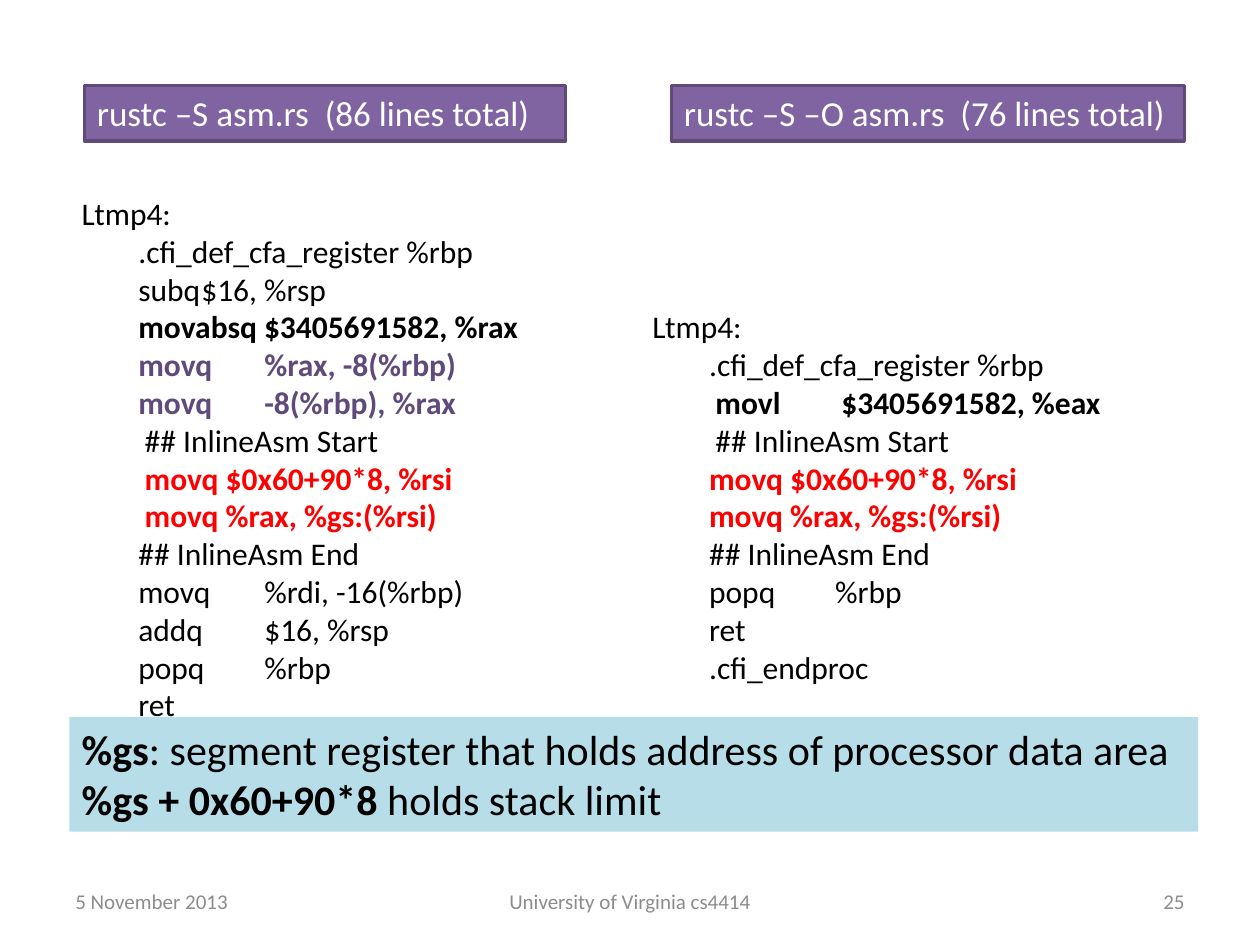
from pptx import Presentation
from pptx.dml.color import RGBColor
from pptx.enum.shapes import MSO_SHAPE
from pptx.enum.text import MSO_ANCHOR, MSO_AUTO_SIZE, PP_ALIGN
from pptx.oxml.ns import qn
from pptx.util import Inches, Pt
from lxml import etree

RECTANGLE = MSO_SHAPE.RECTANGLE
TOP, MIDDLE = MSO_ANCHOR.TOP, MSO_ANCHOR.MIDDLE
LEFT, CENTER, RIGHT = PP_ALIGN.LEFT, PP_ALIGN.CENTER, PP_ALIGN.RIGHT
GROW, FIXED = MSO_AUTO_SIZE.SHAPE_TO_FIT_TEXT, MSO_AUTO_SIZE.NONE

FONT = "Calibri"
COLORS = {
    "text": "000000",
    "white": "FFFFFF",
    "footer": "8C8C8C",
    "header": "8064A2",
    "header_line": "5F4A78",
    "memory": "604A7B",
    "inline": "FF0000",
    "note": "B7DEE8",
}
CODE_INDENT, TAB_INDENT, OPERAND_TAB = 0.45, 0.5, 1.22

# Code line: text, indent in inches, colour, bold
LABEL = ("Ltmp4:", 0, "text", False)
REGISTER = (".cfi_def_cfa_register %rbp", CODE_INDENT, "text", False)
START = ("## InlineAsm Start", TAB_INDENT, "text", False)
CLOSING = [
    ("## InlineAsm End", CODE_INDENT, "text", False),
    ("popq\t%rbp", CODE_INDENT, "text", False),
    ("ret", CODE_INDENT, "text", False),
    (".cfi_endproc", CODE_INDENT, "text", False),
]


def inline_lines(indent):
    return [(text, indent, "inline", True)
            for text in ("movq $0x60+90*8, %rsi", "movq %rax, %gs:(%rsi)")]


PLAIN_CODE = [
    LABEL,
    REGISTER,
    ("subq\t$16, %rsp", CODE_INDENT, "text", False),
    ("movabsq $3405691582, %rax", CODE_INDENT, "text", True),
    ("movq\t%rax, -8(%rbp)", CODE_INDENT, "memory", True),
    ("movq\t-8(%rbp), %rax", CODE_INDENT, "memory", True),
    START,
    *inline_lines(TAB_INDENT),
    CLOSING[0],
    ("movq\t%rdi, -16(%rbp)", CODE_INDENT, "text", False),
    ("addq\t$16, %rsp", CODE_INDENT, "text", False),
    *CLOSING[1:],
]
OPTIMIZED_CODE = [
    LABEL,
    REGISTER,
    ("movl\t$3405691582, %eax", TAB_INDENT, "text", True),
    START,
    *inline_lines(CODE_INDENT),
    *CLOSING,
]


def rgb(name):
    return RGBColor.from_string(COLORS[name])


def set_frame(shape, anchor=TOP, wrap=True, size=FIXED):
    frame = shape.text_frame
    frame.word_wrap = wrap
    frame.auto_size = size
    frame.vertical_anchor = anchor
    return frame


def add_text(paragraph, text, size=18, color="text", bold=False, align=LEFT):
    paragraph.alignment = align
    run = paragraph.add_run()
    run.text = text
    run.font.name = FONT
    run.font.size = Pt(size)
    run.font.bold = bold
    run.font.color.rgb = rgb(color)


def next_paragraph(frame, index):
    return frame.add_paragraph() if index else frame.paragraphs[0]


def set_indent(paragraph, indent):
    """Indent the paragraph and give it a tab stop for operands."""
    properties = paragraph._p.get_or_add_pPr()
    properties.set("marL", str(Inches(indent)))
    properties.set("indent", "0")
    tabs = etree.SubElement(properties, qn("a:tabLst"))
    etree.SubElement(tabs, qn("a:tab"), pos=str(Inches(OPERAND_TAB)), algn="l")


def add_box(slide, box, fill, line=None):
    shape = slide.shapes.add_shape(RECTANGLE, *map(Inches, box))
    shape.shadow.inherit = False
    shape.fill.solid()
    shape.fill.fore_color.rgb = rgb(fill)
    if line:
        shape.line.color.rgb = rgb(line)
        shape.line.width = Pt(2)
    else:
        shape.line.fill.background()
    return set_frame(shape, wrap=False, size=GROW)


def add_header(slide, box, text):
    frame = add_box(slide, box, "header", "header_line")
    add_text(frame.paragraphs[0], text, size=20, color="white")


def add_code(slide, box, lines):
    frame = set_frame(slide.shapes.add_textbox(*map(Inches, box)), size=GROW)
    for index, (text, indent, color, bold) in enumerate(lines):
        paragraph = next_paragraph(frame, index)
        add_text(paragraph, text, color=color, bold=bold)
        set_indent(paragraph, indent)


def add_note(slide, box, lines):
    frame = add_box(slide, box, "note")
    for index, (term, meaning) in enumerate(lines):
        paragraph = next_paragraph(frame, index)
        add_text(paragraph, term, size=24, bold=True)
        add_text(paragraph, meaning, size=24)


def add_footer(slide, box, items):
    left, top, width, height = box
    side, middle = 2.33, 3.17
    places = [(left, side, LEFT),
              (left + (width - middle) / 2, middle, CENTER),
              (left + width - side, side, RIGHT)]
    for text, (x, part_width, align) in zip(items, places):
        shape = slide.shapes.add_textbox(*map(Inches, (x, top, part_width, height)))
        frame = set_frame(shape, anchor=MIDDLE)
        add_text(frame.paragraphs[0], text, size=12, color="footer", align=align)


def main():
    presentation = Presentation()
    presentation.slide_width = Inches(10)
    presentation.slide_height = Inches(7.5)
    slide = presentation.slides.add_slide(presentation.slide_layouts[6])

    add_footer(slide, (0.5, 6.95, 9, 0.4),
               ["5 November 2013", "University of Virginia cs4414", "25"])
    add_header(slide, (5.33, 0.68, 4.07, 0.44), "rustc –S –O asm.rs  (76 lines total)")
    add_code(slide, (0.55, 1.49, 5, 4.64), PLAIN_CODE)
    add_code(slide, (5.08, 2.39, 4.7, 3.13), OPTIMIZED_CODE)
    add_header(slide, (0.67, 0.68, 3.82, 0.44), "rustc –S asm.rs  (86 lines total)")
    add_note(slide, (0.55, 5.69, 8.96, 0.91), [
        ("%gs", ": segment register that holds address of processor data area"),
        ("%gs + 0x60+90*8", " holds stack limit"),
    ])
    presentation.save("out.pptx")


if __name__ == "__main__":
    main()
